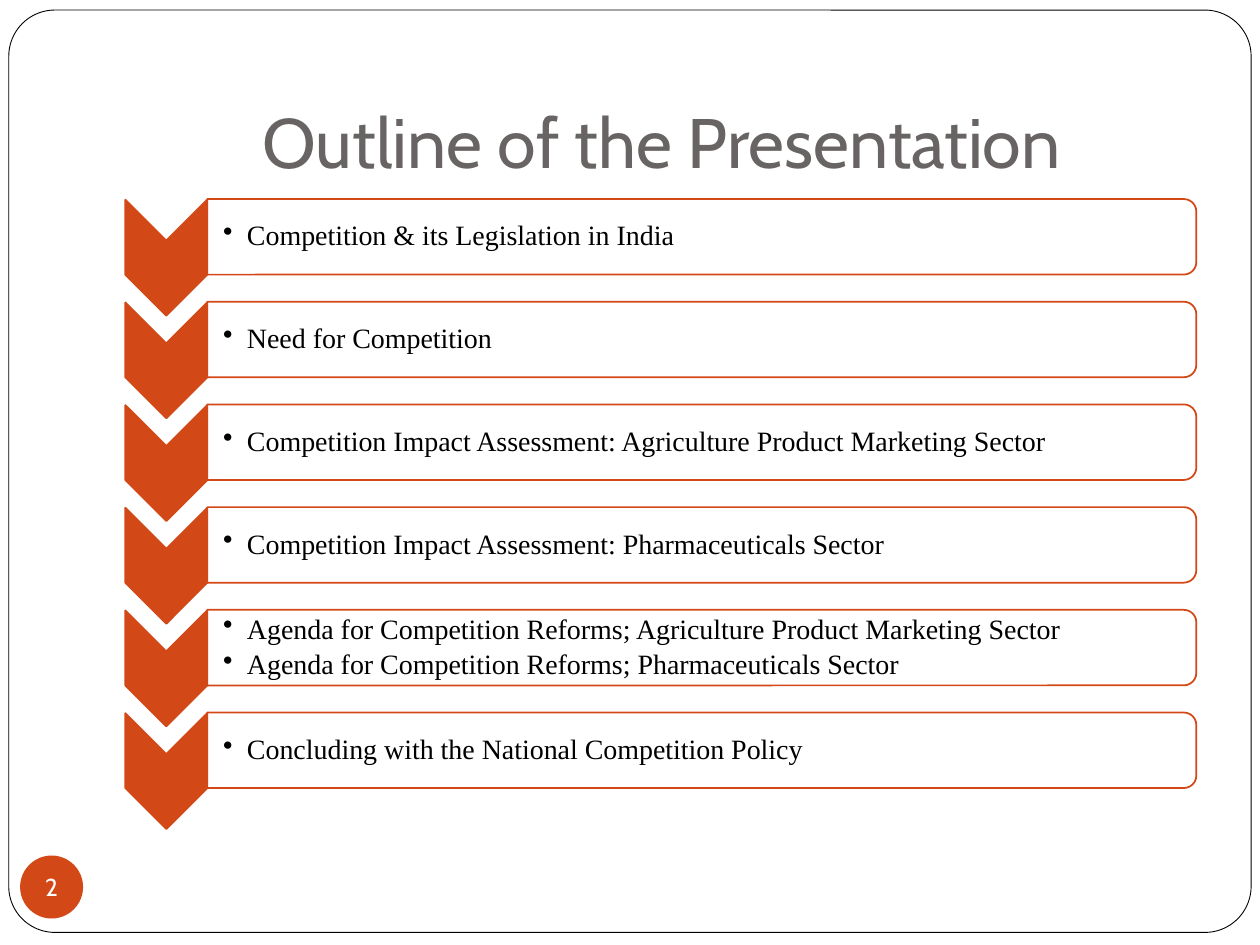
from lxml import etree
from pptx import Presentation
from pptx.dml.color import RGBColor
from pptx.enum import shapes, text
from pptx.oxml import ns
from pptx.util import Inches, Pt

RUST = RGBColor(0xD3, 0x48, 0x17)
GREY = RGBColor(0x69, 0x64, 0x64)
BLACK = RGBColor(0, 0, 0)
WHITE = RGBColor(255, 255, 255)
KIND = shapes.MSO_SHAPE

ROWS = [
    ["Competition & its Legislation in India"],
    ["Need for Competition"],
    ["Competition Impact Assessment: Agriculture Product Marketing Sector"],
    ["Competition Impact Assessment: Pharmaceuticals Sector"],
    ["Agenda for Competition Reforms; Agriculture Product Marketing Sector",
     "Agenda for Competition Reforms; Pharmaceuticals Sector"],
    ["Concluding with the National Competition Policy"],
]
TOP, STEP = 1.58, 0.815


class Deck:
    head = "Cabin"
    body = "Times New Roman"

    def __init__(self, slide):
        self.slide = slide

    def shape(self, kind, box, fill, line=None, width=1, turn=0):
        item = self.slide.shapes.add_shape(kind, *map(Inches, box))
        item.shadow.inherit = False
        item.rotation = turn
        item.fill.solid()
        item.fill.fore_color.rgb = fill
        if line is None:
            item.line.fill.background()
        else:
            item.line.color.rgb = line
            item.line.width = Pt(width)
        return item

    def fade(self, item, share):
        tone = item._element.spPr.find(ns.qn("a:solidFill") + "/" + ns.qn("a:srgbClr"))
        etree.SubElement(tone, ns.qn("a:alpha"), val=str(share * 1000))

    def box(self, area):
        return self.slide.shapes.add_textbox(*map(Inches, area))

    def label(self, item, lines, font, size, color, pad, anchor, align=None, wrap=True):
        frame = item.text_frame
        frame.word_wrap = wrap
        frame.vertical_anchor = anchor
        (frame.margin_left, frame.margin_top,
         frame.margin_right, frame.margin_bottom) = map(Inches, pad)
        frame.text = "\n".join(lines)
        for para in frame.paragraphs:
            para.alignment = align
            para.font.name = font
            para.font.size = Pt(size)
            para.font.color.rgb = color
        return frame.paragraphs

    def bullet(self, para):
        para.line_spacing = 0.9
        para.space_after = Pt(2.8)
        props = para._p.get_or_add_pPr()
        props.set("marL", str(Inches(0.19)))
        props.set("indent", str(-Inches(0.19)))
        mark = etree.Element(ns.qn("a:buChar"), char="•")
        props.insert_element_before(mark, "a:tabLst", "a:defRPr", "a:extLst")

    def row(self, y, lines):
        # Arrow and bar are turned a quarter, so their boxes lie on their sides
        self.shape(KIND.CHEVRON, (0.86, y + 0.14, 0.92, 0.65), RUST, RUST, turn=90)
        bar = self.shape(KIND.ROUND_2_SAME_RECTANGLE,
                         (5.27, y + 0.3 - 7.85 / 2, 0.6, 7.85), WHITE, RUST, turn=90)
        self.fade(bar, 90)
        paras = self.label(self.box((1.65, y + 0.03, 7.82, 0.54)), lines, self.body,
                           16, BLACK, (0.12, 0.01, 0.01, 0.01), text.MSO_ANCHOR.MIDDLE)
        for para in paras:
            self.bullet(para)


def main():
    show = Presentation()
    show.slide_width, show.slide_height = Inches(10), Inches(7.5)
    deck = Deck(show.slides.add_slide(show.slide_layouts[6]))

    # Page frame
    frame = deck.shape(KIND.ROUNDED_RECTANGLE, (0.07, 0.08, 9.86, 7.32), WHITE, BLACK, 0.5)
    frame.adjustments[0] = 0.05

    # Title
    deck.label(deck.box((1, 0.3, 8.5, 1.25)), ["Outline of the Presentation"], deck.head,
               40, GREY, (0.1, 0.05, 0.1, 0.1), text.MSO_ANCHOR.BOTTOM, text.PP_ALIGN.CENTER)

    # Outline rows
    for n, lines in enumerate(ROWS):
        deck.row(TOP + n * STEP, lines)

    # Page number
    badge = deck.shape(KIND.OVAL, (0.16, 6.79, 0.5, 0.5), RUST)
    deck.label(badge, ["2"], deck.head, 14, WHITE, (0, 0, 0, 0),
               text.MSO_ANCHOR.MIDDLE, text.PP_ALIGN.CENTER, wrap=False)

    show.save("out.pptx")


if __name__ == "__main__":
    main()
